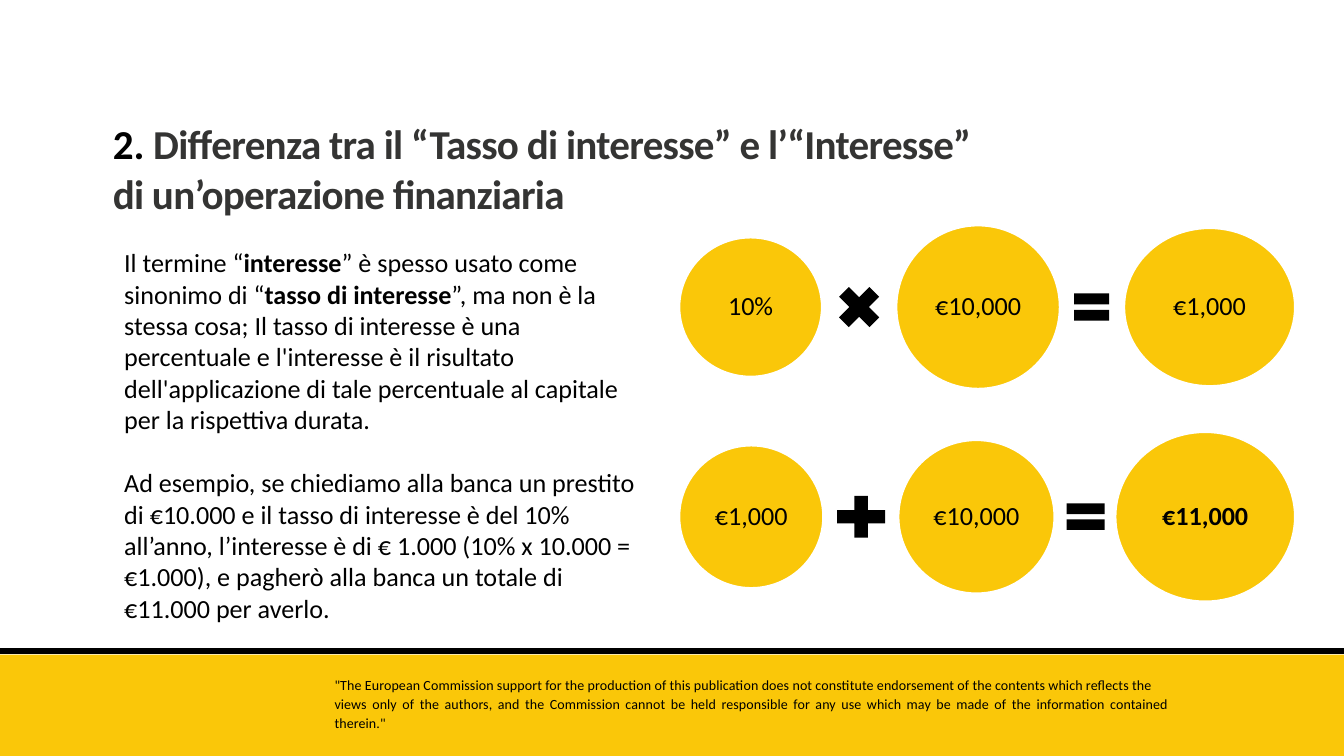
from pptx import Presentation
from pptx.dml.color import RGBColor
from pptx.enum.shapes import MSO_CONNECTOR as Line, MSO_SHAPE as Kind
from pptx.enum.text import MSO_ANCHOR as Anchor, PP_ALIGN as Align
from pptx.oxml.ns import qn
from pptx.util import Pt
from lxml.etree import SubElement

PX = 9144
GOLD = RGBColor(0xFA, 0xC7, 0x09)
BLACK = RGBColor(0, 0, 0)
GREY = RGBColor(0x34, 0x34, 0x33)
WHITE = RGBColor(255, 255, 255)

BODY = {"name": "Calibri", "size": Pt(28)}
BOLD = {**BODY, "bold": True}
HEAD = {"name": "Calibri", "size": Pt(44), "bold": True}
NOTE = {"name": "Calibri", "size": Pt(15)}

TITLE = [[
    ("2.", HEAD, BLACK, 0),
    (" Differenza tra il “Tasso di interesse” e l’“Interesse” di un’operazione finanziaria", HEAD, GREY, -80),
]]
TEXT = [
    [
        ("Il termine “", BODY, BLACK, 0),
        ("interesse", BOLD, BLACK, 0),
        ("” è spesso usato come sinonimo di “", BODY, BLACK, 0),
        ("tasso di interesse", BOLD, BLACK, 0),
        ("”, ma non è la stessa cosa; Il tasso di interesse è una percentuale e l'interesse è il risultato dell'applicazione di tale percentuale al capitale per la rispettiva durata.", BODY, BLACK, 0),
    ],
    [("Ad esempio, se chiediamo alla banca un prestito di €10.000 e il tasso di interesse è del 10% all’anno, l’interesse è di € 1.000 (10% x 10.000 = €1.000), e pagherò alla banca un totale di €11.000 per averlo.", BODY, BLACK, 0)],
]
FOOT = [
    [("\"The European Commission support for the production of this publication does not constitute endorsement of the contents which reflects the", NOTE, BLACK, 10)],
    [("views only of the authors, and the Commission cannot be held responsible for any use which may be made of the information contained therein.\"", NOTE, BLACK, 10)],
]

ROWS = [
    (457, [
        (Kind.OVAL, 1011, 212, 207, "10%", BODY),
        (Kind.MATH_MULTIPLY, 1235, 87, 87, "", BODY),
        (Kind.OVAL, 1334, 243, 243, "€10,000", BODY),
        (Kind.MATH_EQUAL, 1589, 71, 69, "", BODY),
        (Kind.OVAL, 1673, 254, 235, "€1,000", BODY),
    ]),
    (769, [
        (Kind.OVAL, 1011, 214, 212, "€1,000", BODY),
        (Kind.MATH_PLUS, 1233, 97, 85, "", BODY),
        (Kind.OVAL, 1337, 232, 228, "€10,000", BODY),
        (Kind.MATH_EQUAL, 1577, 77, 67, "", BODY),
        (Kind.OVAL, 1660, 267, 252, "€11,000", BOLD),
    ]),
]


def px(*nums):
    return [round(n * PX) for n in nums]


def write(par, text, look, ink, gap):
    run = par.add_run()
    run.text = text
    for key, val in look.items():
        setattr(run.font, key, val)
    run.font.color.rgb = ink
    if gap:
        run.font._element.set("spc", str(gap))


def add_text(slide, area, paras, forms):
    frame = slide.shapes.add_textbox(*px(*area)).text_frame
    frame.word_wrap = True
    for i, (runs, form) in enumerate(zip(paras, forms)):
        par = frame.paragraphs[0] if i == 0 else frame.add_paragraph()
        for key, val in form.items():
            setattr(par, key, val)
        for run in runs:
            write(par, *run)


def add_shape(slide, kind, area, fill):
    shape = slide.shapes.add_shape(kind, *px(*area))
    shape.shadow.inherit = False
    shape.fill.solid()
    shape.fill.fore_color.rgb = fill
    shape.line.fill.background()
    return shape


def add_disc(slide, area, text, look):
    disc = add_shape(slide, Kind.OVAL, area, GOLD)
    disc.line.color.rgb = WHITE
    disc.line.width = Pt(2)
    frame = disc.text_frame
    for side in ("left", "top", "right", "bottom"):
        setattr(frame, "margin_" + side, px(4)[0])
    frame.vertical_anchor = Anchor.MIDDLE
    par = frame.paragraphs[0]
    par.alignment = Align.CENTER
    par.line_spacing = 0.9
    write(par, text, look, BLACK, 0)


def main():
    deck = Presentation()
    deck.slide_width, deck.slide_height = px(2000, 1125)
    slide = deck.slides.add_slide(deck.slide_layouts[6])

    add_shape(slide, Kind.RECTANGLE, (0, 974, 2000, 151), GOLD)
    rule = slide.shapes.add_connector(Line.STRAIGHT, *px(0, 969, 2000, 969))
    rule.line.color.rgb = BLACK
    rule.line.width = Pt(6.75)
    SubElement(rule._element.spPr, qn("a:effectLst"))

    add_text(slide, (488, 1004, 1262, 88), FOOT, [
        {"alignment": Align.JUSTIFY, "line_spacing": Pt(16.1)},
        {"alignment": Align.JUSTIFY, "line_spacing": 1.13},
    ])
    add_text(slide, (158, 172, 1350, 158), TITLE, [{}])
    add_text(slide, (175, 362, 783, 576), TEXT, [{"space_after": Pt(34)}, {}])

    for mid, parts in ROWS:
        for kind, left, wide, high, text, look in parts:
            area = (left, mid - high / 2, wide, high)
            if kind == Kind.OVAL:
                add_disc(slide, area, text, look)
            else:
                add_shape(slide, kind, area, BLACK)

    deck.save("out.pptx")


if __name__ == "__main__":
    main()
